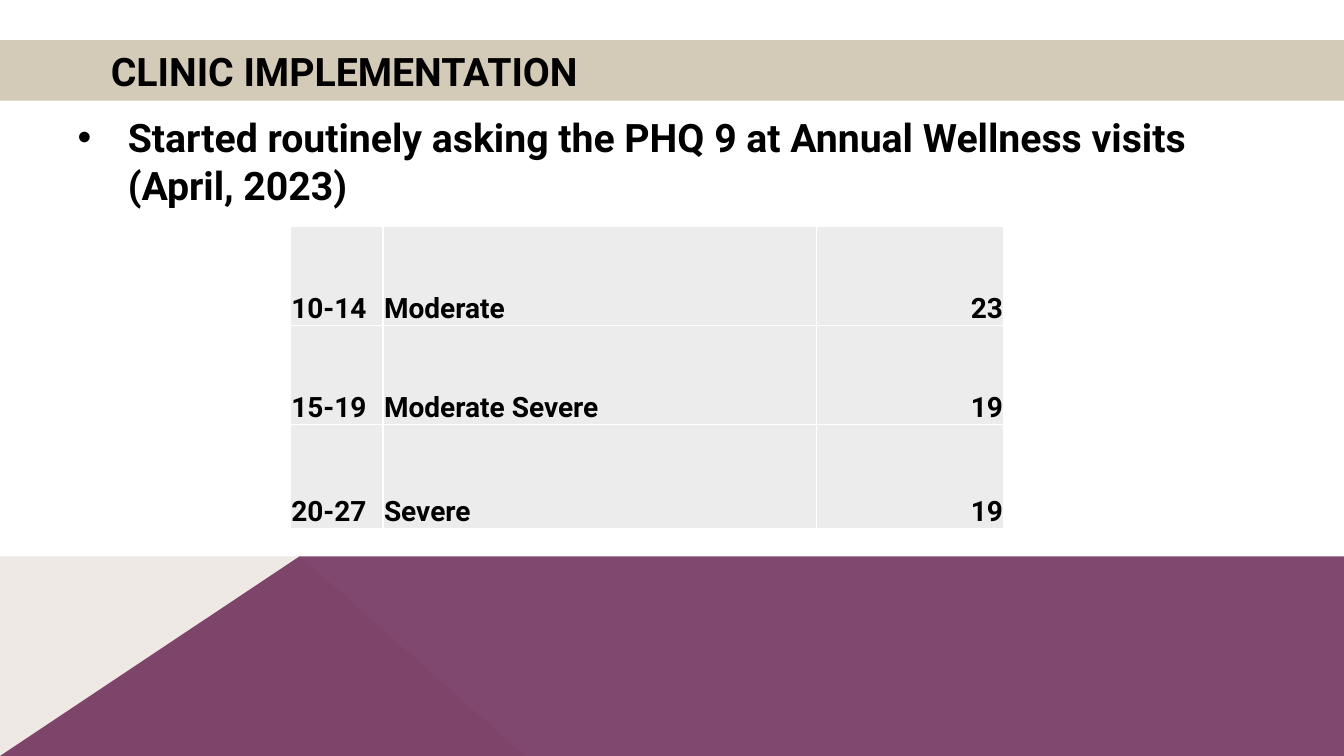
from dataclasses import dataclass

from lxml.etree import SubElement
from pptx import Presentation
from pptx.dml.color import RGBColor as Rgb
from pptx.enum.shapes import MSO_SHAPE as Preset
from pptx.enum.text import MSO_ANCHOR as Anchor, PP_ALIGN as Align
from pptx.oxml import parse_xml
from pptx.oxml.ns import nsdecls, qn
from pptx.slide import Slide
from pptx.table import _Cell as Cell
from pptx.text.text import _Paragraph as Paragraph
from pptx.util import Emu, Inches, Pt

COLORS = {
    "text": "000000",
    "title_band": "D3CAB7",
    "sand": "EFE9E5",
    "plum": "621B4B",
    "cell": "ECECEC",
    "border": "FFFFFF",
}
FONT = "Roboto"
SLIDE_W, SLIDE_H = Inches(13.33), Inches(7.5)
HORIZON = 73.6


@dataclass(frozen=True)
class Area:
    left: float
    top: float
    width: float
    height: float

    def box(self) -> tuple[Emu, Emu, Emu, Emu]:
        return across(self.left), down(self.top), across(self.width), down(self.height)


@dataclass(frozen=True)
class Facet:
    corners: tuple[tuple[float, float], ...]
    color: str
    opacity: int


@dataclass(frozen=True)
class Score:
    span: str
    severity: str
    patients: str


@dataclass(frozen=True)
class Column:
    field: str
    width: float
    align: Align


FACETS = (
    Facet(((0, 100), (0, HORIZON), (22.36, HORIZON), (39.08, 100)), "sand", 100),
    Facet(((0, 100), (22.28, HORIZON), (100, HORIZON), (100, 100)), "plum", 80),
)
TITLE_AREA = Area(0, 5.33, 100, 8)
BODY_AREA = Area(5.03, 14.4, 86.27, 56.67)
COLUMNS = (
    Column("span", 6.9, Align.LEFT),
    Column("severity", 32.26, Align.LEFT),
    Column("patients", 13.95, Align.RIGHT),
)
ROW_HEIGHTS = (13.07, 13.07, 13.73)
SCORES = (
    Score("10-14", "Moderate", "23"),
    Score("15-19", "Moderate Severe", "19"),
    Score("20-27", "Severe", "19"),
)
SCORES_AREA = Area(21.6, 30, sum(c.width for c in COLUMNS), sum(ROW_HEIGHTS))


def across(percent: float) -> Emu:
    return Emu(round(SLIDE_W * percent / 100))


def down(percent: float) -> Emu:
    return Emu(round(SLIDE_H * percent / 100))


def color(key: str) -> Rgb:
    return Rgb.from_string(COLORS[key])


def add_words(paragraph: Paragraph, words: str, size: int) -> None:
    run = paragraph.add_run()
    run.text = words
    run.font.name = FONT
    run.font.size = Pt(size)
    run.font.bold = True
    run.font.color.rgb = color("text")


def draw_facet(slide: Slide, facet: Facet) -> None:
    start, *others = [(across(x), down(y)) for x, y in facet.corners]
    outline = slide.shapes.build_freeform(*start)
    outline.add_line_segments(others, close=True)
    panel = outline.convert_to_shape()
    panel.shadow.inherit = False
    panel.fill.solid()
    panel.fill.fore_color.rgb = color(facet.color)
    panel.line.fill.background()
    if facet.opacity < 100:
        tint = panel._element.spPr.find(qn("a:solidFill")).find(qn("a:srgbClr"))
        SubElement(tint, qn("a:alpha"), val=str(facet.opacity * 1000))


def draw_title(slide: Slide, words: str) -> None:
    band = slide.shapes.add_shape(Preset.RECTANGLE, *TITLE_AREA.box())
    band.shadow.inherit = False
    band.fill.solid()
    band.fill.fore_color.rgb = color("title_band")
    band.line.fill.background()
    frame = band.text_frame
    frame.margin_left = across(8.25)
    frame.vertical_anchor = Anchor.MIDDLE
    heading = frame.paragraphs[0]
    heading.alignment = Align.LEFT
    add_words(heading, words, 28)


def draw_body(slide: Slide, words: str) -> None:
    frame = slide.shapes.add_textbox(*BODY_AREA.box()).text_frame
    frame.word_wrap = True
    point = frame.paragraphs[0]
    layout = point._p.get_or_add_pPr()
    layout.set("marL", str(Inches(0.5)))
    layout.set("indent", str(-Inches(0.5)))
    SubElement(layout, qn("a:buFont"), typeface="Arial")
    SubElement(layout, qn("a:buChar"), char="•")
    add_words(point, words, 28)


def style_cell(cell: Cell) -> None:
    cell.fill.solid()
    cell.fill.fore_color.rgb = color("cell")
    cell.vertical_anchor = Anchor.BOTTOM
    cell.margin_left = cell.margin_top = cell.margin_right = Inches(0.01)
    cell.margin_bottom = 0
    properties = cell._tc.get_or_add_tcPr()
    for place, side in enumerate(("lnL", "lnR", "lnT", "lnB")):
        border = parse_xml(
            f'<a:{side} {nsdecls("a")} w="{Pt(1)}"><a:solidFill>'
            f'<a:srgbClr val="{COLORS["border"]}"/></a:solidFill></a:{side}>'
        )
        properties.insert(place, border)


def draw_scores(slide: Slide) -> None:
    size = len(SCORES), len(COLUMNS)
    scores = slide.shapes.add_table(*size, *SCORES_AREA.box()).table
    scores.first_row = scores.horz_banding = False
    for index, column in enumerate(COLUMNS):
        scores.columns[index].width = across(column.width)
    for index, (score, height) in enumerate(zip(SCORES, ROW_HEIGHTS)):
        scores.rows[index].height = down(height)
        for place, column in enumerate(COLUMNS):
            cell = scores.cell(index, place)
            style_cell(cell)
            entry = cell.text_frame.paragraphs[0]
            entry.alignment = column.align
            add_words(entry, getattr(score, column.field), 20)


def main() -> None:
    deck = Presentation()
    deck.slide_width, deck.slide_height = SLIDE_W, SLIDE_H
    slide = deck.slides.add_slide(deck.slide_layouts[6])
    for facet in FACETS:
        draw_facet(slide, facet)
    draw_title(slide, "CLINIC IMPLEMENTATION")
    draw_body(
        slide,
        "Started routinely asking the PHQ 9 at Annual Wellness visits (April, 2023)",
    )
    draw_scores(slide)
    deck.save("out.pptx")


if __name__ == "__main__":
    main()
